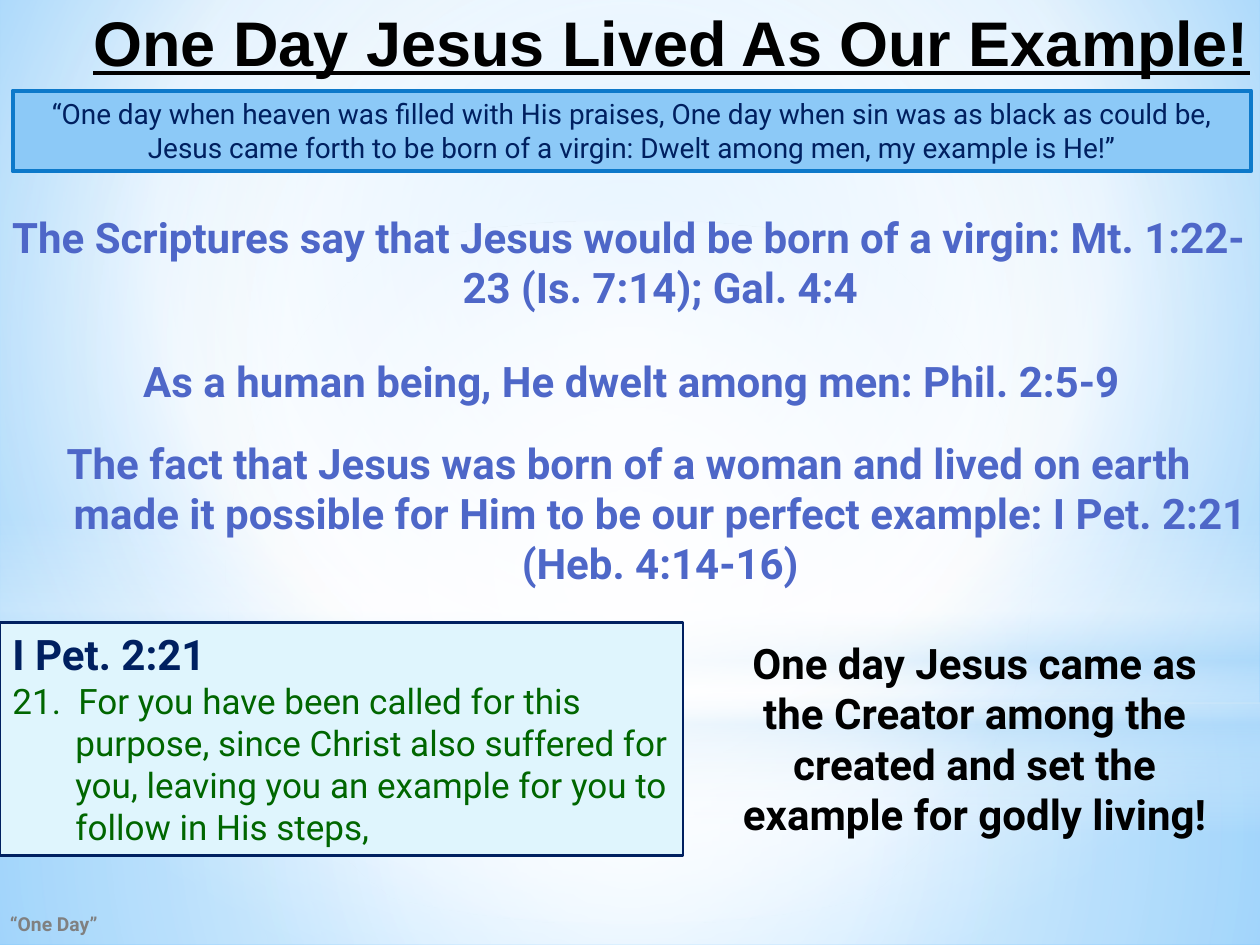
from lxml import etree
from pptx import Presentation
from pptx.dml.color import RGBColor
from pptx.enum.shapes import MSO_SHAPE
from pptx.enum.text import MSO_ANCHOR, MSO_AUTO_SIZE, PP_ALIGN
from pptx.oxml.ns import qn
from pptx.util import Inches, Pt

BLACK = RGBColor(0x00, 0x00, 0x00)
GRAY = RGBColor(0x80, 0x80, 0x80)
WHITE = RGBColor(0xFF, 0xFF, 0xFF)
NAVY = RGBColor(0x00, 0x20, 0x60)
GREEN = RGBColor(0x00, 0x66, 0x00)
INDIGO = RGBColor(0x4E, 0x67, 0xC8)
SKY = RGBColor(0x8C, 0xC9, 0xF7)
BLUE = RGBColor(0x0D, 0x79, 0xCA)
PALE = RGBColor(0xDF, 0xF5, 0xFD)
HAZE = RGBColor(0xB4, 0xDC, 0xFA)
BG_INNER = RGBColor(0x9E, 0xD5, 0xFF)
BG_OUTER = RGBColor(0x5B, 0xB9, 0xFF)

CENTER = (50, 50, 50, 50)
HANG = Inches(0.5)


class SlideBuilder:
    """Holds the text style and the current slide."""

    font = "Roboto"

    def __init__(self, s):
        self.s = s

    def gradient(self, holder, stops, focus=None):
        """Swap the solid fill in holder for a round or top-down gradient."""
        grad = etree.Element(qn("a:gradFill"), rotWithShape="1")
        gs_list = etree.SubElement(grad, qn("a:gsLst"))
        for pos, color, opacity in stops:
            gs = etree.SubElement(gs_list, qn("a:gs"), pos=str(pos * 1000))
            clr = etree.SubElement(gs, qn("a:srgbClr"), val=str(color))
            if opacity < 100:
                etree.SubElement(clr, qn("a:alpha"), val=str(opacity * 1000))
        if focus:
            circle = etree.SubElement(grad, qn("a:path"))
            circle.set("path", "circle")
            rect = etree.SubElement(circle, qn("a:fillToRect"))
            for side, value in zip("ltrb", focus):
                rect.set(side, str(value * 1000))
        else:
            etree.SubElement(grad, qn("a:lin"), ang="5400000", scaled="0")
        solid = holder.find(qn("a:solidFill"))
        holder.replace(solid, grad)

    def background(self, stops, focus):
        self.s.background.fill.solid()
        self.gradient(self.s.element.xpath(".//p:bgPr")[0], stops, focus)

    def shape(self, box, fill, line=None, width=0, kind=MSO_SHAPE.RECTANGLE):
        sp = self.s.shapes.add_shape(kind, *map(Inches, box))
        sp.shadow.inherit = False
        sp.fill.solid()
        sp.fill.fore_color.rgb = fill
        if line is None:
            sp.line.fill.background()
        else:
            sp.line.color.rgb = line
            sp.line.width = Pt(width)
        return sp

    def glow(self, box, stops, focus=None, kind=MSO_SHAPE.RECTANGLE):
        sp = self.shape(box, WHITE, kind=kind)
        self.gradient(sp.element.spPr, stops, focus)

    def fill_text(self, sp, lines, align=PP_ALIGN.CENTER, hang=HANG,
                  anchor=MSO_ANCHOR.TOP, fit=MSO_AUTO_SIZE.SHAPE_TO_FIT_TEXT):
        """Each line is a pair of text and font format."""
        tf = sp.text_frame
        tf.word_wrap = True
        tf.auto_size = fit
        tf.vertical_anchor = anchor
        for i, (text, style) in enumerate(lines):
            p = tf.add_paragraph() if i else tf.paragraphs[0]
            p.alignment = align
            if hang:
                pPr = p._p.get_or_add_pPr()
                pPr.set("marL", str(hang))
                pPr.set("indent", str(-hang))
            r = p.add_run()
            r.text = text
            r.font.name = self.font
            for name, value in style.items():
                if name == "color":
                    r.font.color.rgb = value
                else:
                    setattr(r.font, name, value)

    def text(self, box, lines, **options):
        sp = self.s.shapes.add_textbox(*map(Inches, box))
        self.fill_text(sp, lines, **options)

    def title(self, box, text, style):
        sp = self.s.shapes.title
        sp.left, sp.top, sp.width, sp.height = map(Inches, box)
        self.fill_text(sp, [(text, style)], align=PP_ALIGN.RIGHT, hang=0,
                       anchor=MSO_ANCHOR.MIDDLE, fit=MSO_AUTO_SIZE.NONE)
        # Bring the title in front of the backdrop
        sp.element.getparent().append(sp.element)


def style(size, color, bold=False, **extra):
    return {"size": Pt(size), "color": color, "bold": bold, **extra}


def main():
    prs = Presentation()
    prs.slide_width, prs.slide_height = Inches(10), Inches(7.5)
    b = SlideBuilder(prs.slides.add_slide(prs.slide_layouts[5]))

    # Backdrop
    b.background([(0, BG_INNER, 100), (60, WHITE, 100), (100, BG_OUTER, 100)],
                 (20, 10, 20, 60))
    b.glow((0, 5.58, 10, 1.92),
           [(0, WHITE, 91), (37, WHITE, 76), (100, HAZE, 79)], CENTER)
    b.glow((0, 0, 10, 5.58),
           [(0, WHITE, 89), (48, WHITE, 62), (100, HAZE, 79)], CENTER)
    b.glow((0, 4.12, 10, 2.5),
           [(0, WHITE, 0), (29, WHITE, 30), (45, HAZE, 40),
            (55, WHITE, 26), (65, HAZE, 60), (100, WHITE, 0)])
    b.glow((0, 1.75, 10, 5.58), [(0, WHITE, 100), (56, WHITE, 0)], CENTER,
           MSO_SHAPE.OVAL)

    # Footer and title
    b.text((-0.02, 7.16, 3.67, 0.34), [("“One Day”", style(11, GRAY, True))],
           align=PP_ALIGN.LEFT, hang=0, anchor=MSO_ANCHOR.MIDDLE,
           fit=MSO_AUTO_SIZE.NONE)
    b.title((0, -0.01, 10.02, 0.67), "One Day Jesus Lived As Our Example!",
            style(36, BLACK, True, name="Arial", underline=True))

    # Hymn verse
    verse = style(16, NAVY)
    b.fill_text(b.shape((0.1, 0.72, 9.83, 0.64), SKY, BLUE, 2.25), [
        ("“One day when heaven was filled with His praises, "
         "One day when sin was as black as could be,", verse),
        ("Jesus came forth to be born of a virgin: "
         "Dwelt among men, my example is He!”", verse),
    ])

    # Main points
    points = [
        (-0.02, 1.63, 0.91, "The Scriptures say that Jesus would be born of a "
         "virgin: Mt. 1:22-23 (Is. 7:14); Gal. 4:4"),
        (0, 2.77, 0.5, "As a human being, He dwelt among men: Phil. 2:5-9"),
        (-0.02, 3.42, 1.31, "The fact that Jesus was born of a woman and lived "
         "on earth made it possible for Him to be our perfect example: "
         "I Pet. 2:21 (Heb. 4:14-16)"),
    ]
    for left, top, height, point in points:
        b.text((left, top, 10.02, height), [(point, style(24, INDIGO, True))])

    # Scripture box
    b.fill_text(b.shape((0, 4.94, 5.42, 1.85), PALE, NAVY, 1.5), [
        ("I Pet. 2:21", style(24, NAVY, True)),
        ("21.  For you have been called for this purpose, since Christ also "
         "suffered for you, leaving you an example for you to follow in His "
         "steps,", style(20, GREEN)),
    ], align=PP_ALIGN.LEFT)

    # Conclusion
    closing = ["One day Jesus came as", "the Creator among the",
               "created and set the", "example for godly living!"]
    b.text((5.45, 5.01, 4.57, 1.72),
           [(line, style(24, BLACK, True)) for line in closing])

    prs.save("out.pptx")


if __name__ == "__main__":
    main()
